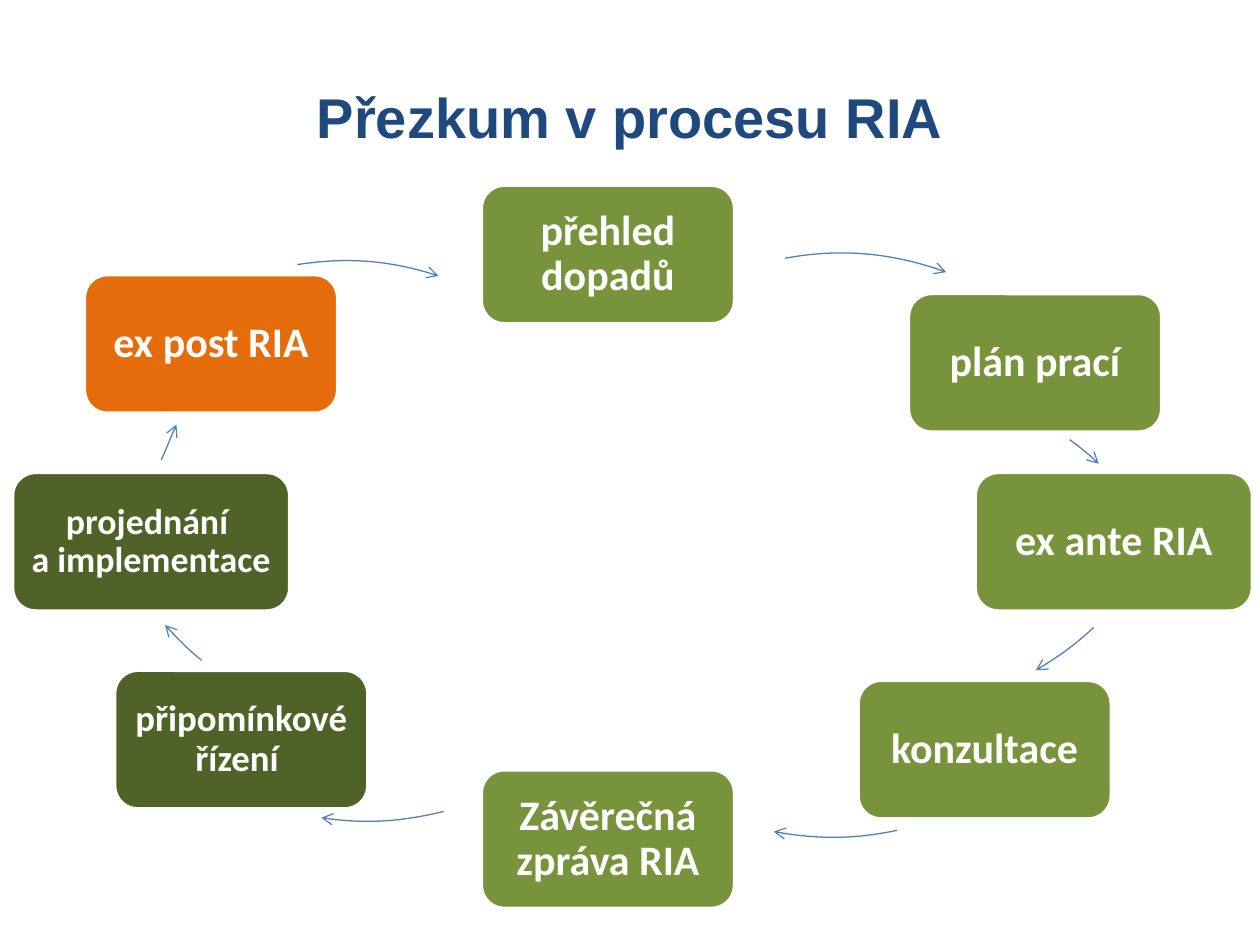
from lxml import etree
from pptx import Presentation
from pptx.dml.color import RGBColor
from pptx.enum.shapes import MSO_SHAPE
from pptx.enum.text import MSO_ANCHOR, PP_ALIGN
from pptx.oxml.ns import qn
from pptx.util import Inches, Pt

ROUNDED = MSO_SHAPE.ROUNDED_RECTANGLE
MIDDLE = MSO_ANCHOR.MIDDLE
CENTER = PP_ALIGN.CENTER
TITLE_ONLY = 5
COLORS = {
    "title": "1F497D",
    "arrow": "4F81BD",
    "analysis": "77933C",
    "approval": "4F6228",
    "review": "E46C0A",
    "white": "FFFFFF",
}
STEP_HEIGHT = 1.1
NARROW, WIDE = 2.01, 2.2
CIRCLE_SIZE = 4.95
STEPS = [
    ("přehled dopadů", 3.82, 1.47, NARROW, "analysis", 24),
    ("plán prací", 7.21, 2.33, NARROW, "analysis", 24),
    ("ex ante RIA", 7.74, 3.75, WIDE, "analysis", 24),
    ("konzultace", 6.81, 5.4, NARROW, "analysis", 24),
    ("Závěrečná zpráva RIA", 3.82, 6.11, NARROW, "analysis", 24),
    ("připomínkové řízení ", 0.91, 5.32, NARROW, "approval", 21),
    ("projednání \va implementace", 0.1, 3.75, WIDE, "approval", 20.5),
    ("ex post RIA", 0.67, 2.18, NARROW, "review", 24),
]
ARROWS = [
    (4.2, 2.01, [(6.23, 2.05), (6.66, 1.97), (7.1, 2.01), (7.51, 2.16)]),
    (4.54, 3, [(8.49, 3.49), (8.57, 3.55), (8.65, 3.61), (8.72, 3.68)]),
    (4.52, 0.7, [(8.68, 4.98), (8.54, 5.11), (8.39, 5.22), (8.22, 5.32)]),
    (4.14, 1.7, [(7.12, 6.59), (6.79, 6.66), (6.46, 6.66), (6.14, 6.6)]),
    (0.43, 1.57, [(3.52, 6.44), (3.2, 6.52), (2.87, 6.54), (2.55, 6.49)]),
    (0.73, 0.89, [(1.6, 5.24), (1.49, 5.15), (1.4, 5.06), (1.31, 4.96)]),
    (1.14, 2, [(1.28, 3.65), (1.32, 3.56), (1.36, 3.46), (1.4, 3.37)]),
    (0.25, 2.07, [(2.36, 2.1), (2.74, 2.04), (3.12, 2.07), (3.48, 2.19)]),
]


def color(name):
    """Return the named colour."""
    return RGBColor.from_string(COLORS[name])


def format_text(frame, font_name, size, color_name):
    """Centre the text of a frame and set its bold font."""
    frame.word_wrap = True
    frame.vertical_anchor = MIDDLE
    for para in frame.paragraphs:
        para.alignment = CENTER
        for span in para.runs:
            span.font.name = font_name
            span.font.size = Pt(size)
            span.font.bold = True
            span.font.color.rgb = color(color_name)


def add_title(page, text, left, top, width, height):
    """Place and format the title placeholder."""
    title = page.shapes.title
    title.left, title.top = Inches(left), Inches(top)
    title.width, title.height = Inches(width), Inches(height)
    title.text_frame.text = text
    format_text(title.text_frame, "Arial", 32, "title")


def add_step(page, text, left, top, width, fill, size):
    """Add one rounded step of the cycle."""
    box = page.shapes.add_shape(
        ROUNDED, Inches(left), Inches(top), Inches(width), Inches(STEP_HEIGHT))
    box.shadow.inherit = False
    box.fill.solid()
    box.fill.fore_color.rgb = color(fill)
    box.line.color.rgb = color("white")
    box.line.width = Pt(2)
    frame = box.text_frame
    frame.text = text
    inset = Inches(0.1 if size == 24 else 0.09)
    frame.margin_left = frame.margin_right = inset
    frame.margin_top = frame.margin_bottom = inset
    format_text(frame, "Calibri", size, "white")
    frame.paragraphs[0].line_spacing = 0.9


def set_curve(shape, points):
    """Make the outline of a freeform one cubic curve in its own box."""
    outline = shape.element.spPr.find(".//" + qn("a:path"))
    for child in list(outline):
        outline.remove(child)
    outline.set("w", str(shape.width))
    outline.set("h", str(shape.height))
    for tag, part in (("a:moveTo", points[:1]), ("a:cubicBezTo", points[1:])):
        command = etree.SubElement(outline, qn(tag))
        for x, y in part:
            etree.SubElement(command, qn("a:pt"), x=str(x), y=str(y))


def add_arrow(page, left, top, controls):
    """Add a curved arrow on a circle whose box starts at left and top."""
    builder = page.shapes.build_freeform(scale=1.0)
    builder.add_line_segments([(Inches(1), Inches(1))], close=False)
    arrow = builder.convert_to_shape()
    arrow.left, arrow.top = Inches(left), Inches(top)
    arrow.width = arrow.height = Inches(CIRCLE_SIZE)
    set_curve(arrow, [(Inches(x - left), Inches(y - top)) for x, y in controls])
    arrow.shadow.inherit = False
    arrow.fill.background()
    arrow.line.color.rgb = color("arrow")
    arrow.line.width = Pt(0.75)
    line = arrow.element.spPr.find(qn("a:ln"))
    etree.SubElement(line, qn("a:tailEnd"), type="arrow")


def add_cycle(page):
    """Add the steps of the cycle with an arrow after each."""
    for step, arrow in zip(STEPS, ARROWS):
        add_step(page, *step)
        add_arrow(page, *arrow)


def main():
    """Build and save the deck."""
    deck = Presentation()
    deck.slide_width, deck.slide_height = Inches(10), Inches(7.5)
    page = deck.slides.add_slide(deck.slide_layouts[TITLE_ONLY])
    add_title(page, "Přezkum v procesu RIA", 0.5, 0.3, 9, 1.25)
    add_cycle(page)
    deck.save("out.pptx")


if __name__ == "__main__":
    main()
